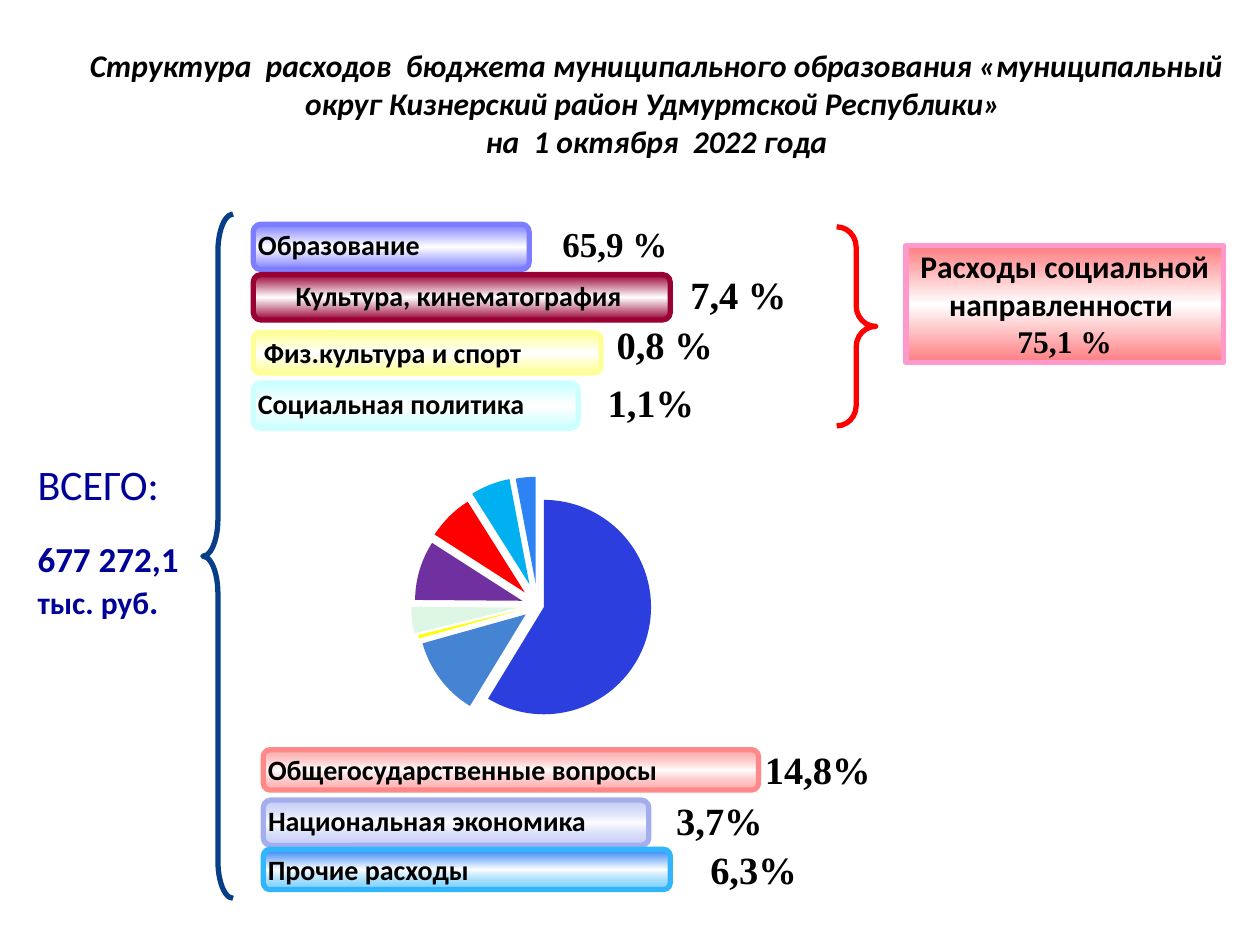
from lxml import etree
from pptx import Presentation
from pptx import util as u
from pptx.chart.data import CategoryChartData
from pptx.dml.color import RGBColor
from pptx.enum import chart as charts, shapes, text
from pptx.oxml import parse_xml
from pptx.oxml.ns import nsdecls, qn

COLORS = {
    "ink": "000000", "white": "FFFFFF", "total": "000099", "brace": "073E87",
    "red": "FF0000", "violet": "7D7DFF", "wine": "990033", "yellow": "FFFF99",
    "aqua": "CCFFFF", "coral": "FF7D7D", "coral_line": "FF8989",
    "lilac": "A4B1F4", "lilac_line": "A5AEED", "blue": "2D83F4", "sky": "31B6FD",
    "salmon": "FF7C80", "pink": "FF99CC",
}
SANS, SERIF = "Calibri", "Times New Roman"
LEFT, CENTER = text.PP_ALIGN.LEFT, text.PP_ALIGN.CENTER
TOP, MIDDLE = text.MSO_ANCHOR.TOP, text.MSO_ANCHOR.MIDDLE
RECT, ROUND = shapes.MSO_SHAPE.RECTANGLE, shapes.MSO_SHAPE.ROUNDED_RECTANGLE

TITLE = ("Структура  расходов  бюджета муниципального образования «муниципальный "
         "округ Кизнерский район Удмуртской Республики» \vна  1 октября  2022 года")

SOCIAL_LEFT, OTHER_LEFT = 2.01, 2.09
BARS = [
    (" Физ.культура и спорт", (SOCIAL_LEFT, 2.64, 2.76, 0.32), LEFT,
     ("yellow", 100), ("yellow", 100), "yellow"),
    ("Социальная политика", (SOCIAL_LEFT, 3.04, 2.58, 0.36), LEFT,
     ("aqua", 100), ("aqua", 100), "aqua"),
    ("Образование", (SOCIAL_LEFT, 1.78, 2.19, 0.36), LEFT,
     ("violet", 100), ("violet", 100), "violet"),
    ("Культура, кинематография ", (SOCIAL_LEFT, 2.18, 3.31, 0.36), CENTER,
     ("wine", 100), ("wine", 100), "wine"),
    ("Общегосударственные вопросы", (OTHER_LEFT, 5.95, 3.93, 0.32), LEFT,
     ("coral", 63), ("coral", 63), "coral_line"),
    ("Национальная экономика", (OTHER_LEFT, 6.35, 3.06, 0.36), LEFT,
     ("lilac", 63), ("lilac", 63), "lilac_line"),
    ("Прочие расходы", (OTHER_LEFT, 6.74, 3.23, 0.32), LEFT,
     ("blue", 100), ("sky", 63), "sky"),
]
SHARES = [
    ("65,9 %", (4.37, 1.62, 1.02, 0.63), 20),
    ("7,4 %", (4.92, 2.18, 1.88, 0.31), 22),
    ("0,8 %", (4.84, 2.58, 0.87, 0.31), 22),
    ("1,1%", (4.69, 3.04, 0.95, 0.31), 22),
    ("14,8%", (6.02, 5.95, 0.94, 0.31), 22),
    ("3,7%", (5.16, 6.35, 1.1, 0.31), 22),
    ("6,3%", (5.47, 6.74, 1.02, 0.31), 22),
]
BRACES = [
    ((6.64, 1.8, 0.31, 1.58), 180, 0.522, "red"),
    ((1.61, 1.7, 0.24, 5.43), 0, 1.232, "brace"),
]
SLICES = [
    (59, "2D3EDF", 6), (12, "4584D3", 14), (0.5, "FFFF00", 15), (4, "DEF6E4", 18),
    (9, "7030A0", 15), (7, "FF0000", 17), (6, "00B0F0", 21), (3, "2D83F4", 20),
]
SERIES_EXPLOSION = 31
PLOT = {"x": 0.1, "y": 0.498, "w": 0.54, "h": 0.502}


def rgb(value):
    return RGBColor.from_string(value)


def inches(place):
    return [u.Inches(value) for value in place]


def assign(target, values):
    for name, value in values.items():
        setattr(target, name, value)


def write(shape, paragraphs, align=LEFT, anchor=TOP, inset=(0.02, 0.01), wrap=True, grow=False):
    frame = shape.text_frame
    across, down = inches(inset)
    size = text.MSO_AUTO_SIZE.SHAPE_TO_FIT_TEXT if grow else text.MSO_AUTO_SIZE.NONE
    assign(frame, {"margin_left": across, "margin_right": across, "margin_top": down,
                   "margin_bottom": down, "vertical_anchor": anchor,
                   "word_wrap": wrap, "auto_size": size})
    for index, spans in enumerate(paragraphs):
        para = frame.paragraphs[0] if index == 0 else frame.add_paragraph()
        para.alignment = align
        for words, points, face, bold, color in spans:
            span = para.add_run()
            span.text = words
            assign(span.font, {"size": u.Pt(points), "name": face, "bold": bold})
            span.font.color.rgb = rgb(COLORS[color])


def add_outlined(page, kind, place, line):
    shape = page.shapes.add_shape(kind, *inches(place))
    shape.shadow.inherit = False
    shape.line.color.rgb = rgb(COLORS[line])
    shape.line.width = u.Pt(3)
    return shape


def shade(shape, first, last):
    shape.fill.gradient()
    shape.fill.gradient_angle = 270
    stops = next(shape.element.iter(qn("a:gsLst")))
    for stop in list(stops):
        stops.remove(stop)
    for position, (color, alpha) in ((0, first), (50, ("white", 100)), (100, last)):
        stop = etree.SubElement(stops, qn("a:gs"), pos=str(position * 1000))
        tone = etree.SubElement(stop, qn("a:srgbClr"), val=COLORS[color])
        if alpha < 100:
            etree.SubElement(tone, qn("a:alpha"), val=str(alpha * 1000))


def add_pie(page):
    data = CategoryChartData()
    data.categories = [str(index + 1) for index in range(len(SLICES))]
    data.add_series("Series 1", [value for value, _, _ in SLICES])
    chart = page.shapes.add_chart(charts.XL_CHART_TYPE.PIE,
                                  *inches((1.8, 1.48, 6.67, 4.44)), data).chart
    assign(chart, {"has_legend": False, "has_title": False})
    assign(chart.font, {"size": u.Pt(18), "name": SANS})
    chart.font.color.rgb = rgb(COLORS["ink"])
    plot = chart.plots[0]
    plot.vary_by_categories = True
    series = plot.series[0]
    for index, (_, color, _) in enumerate(SLICES):
        fill = series.points[index].format.fill
        fill.solid()
        fill.fore_color.rgb = rgb(color)

    def explosion(amount):
        return parse_xml(f'<c:explosion {nsdecls("c")} val="{amount}"/>')

    points = series._element.findall(qn("c:dPt"))
    for point, (_, _, amount) in zip(points, SLICES):
        point.find(qn("c:spPr")).addprevious(explosion(amount))
    points[0].addprevious(explosion(SERIES_EXPLOSION))

    area = chart.element.find(".//" + qn("c:plotArea"))
    for layout in area.findall(qn("c:layout")):
        area.remove(layout)
    settings = {"layoutTarget": "inner", "xMode": "edge", "yMode": "edge", **PLOT}
    rules = "".join(f'<c:{name} val="{value}"/>' for name, value in settings.items())
    area.insert(0, parse_xml(f'<c:layout {nsdecls("c")}><c:manualLayout>{rules}'
                             "</c:manualLayout></c:layout>"))


def main():
    deck = Presentation()
    deck.slide_width, deck.slide_height = inches((10, 7.5))
    page = deck.slides.add_slide(deck.slide_layouts[5])

    title = page.shapes.title
    assign(title, dict(zip(("left", "top", "width", "height"), inches((0.42, 0.28, 9.58, 1.07)))))
    write(title, [[(TITLE, 18, SANS, True, "ink")]], CENTER, MIDDLE, (0.1, 0.05))
    title.text_frame.paragraphs[0].runs[0].font.italic = True
    para = title.text_frame.paragraphs[0]
    lines = TITLE.split("\v")
    para.runs[0].text = lines[0]
    para.add_line_break()
    span = para.add_run()
    span.text = lines[1]
    assign(span.font, {"size": u.Pt(18), "name": SANS, "bold": True, "italic": True})
    span.font.color.rgb = rgb(COLORS["ink"])

    add_pie(page)

    for words, place, align, first, last, line in BARS:
        bar = add_outlined(page, ROUND, place, line)
        shade(bar, first, last)
        write(bar, [[(words, 16, SANS, True, "ink")]], align, grow=True)

    for words, place, points in SHARES:
        box = page.shapes.add_textbox(*inches(place))
        write(box, [[(words, points, SERIF, True, "ink")]], CENTER, MIDDLE, (0.02, 0.02))

    for place, turn, curl, color in BRACES:
        brace = add_outlined(page, shapes.MSO_SHAPE.LEFT_BRACE, place, color)
        brace.fill.background()
        brace.rotation = turn
        brace.adjustments[0] = curl
        brace.adjustments[1] = 0.5

    social = add_outlined(page, RECT, (7.19, 1.95, 2.52, 0.93), "pink")
    shade(social, ("salmon", 100), ("salmon", 100))
    write(social, [[("Расходы социальной направленности ", 18, SANS, True, "ink")],
                   [("75,1 %", 18, SERIF, True, "ink")]], CENTER, grow=True)

    amount = page.shapes.add_textbox(*inches((0.2, 4.22, 1.46, 0.77)))
    write(amount, [[("677 272,1", 20, SANS, True, "total")],
                   [("тыс. руб", 18, SANS, True, "total"), (".", 20, SANS, True, "total")]],
          inset=(0.1, 0.05), wrap=False, grow=True)
    total = page.shapes.add_textbox(*inches((0.2, 3.59, 1.5, 0.5)))
    write(total, [[("ВСЕГО:", 24, SANS, False, "total")]], inset=(0.1, 0.05), grow=True)

    deck.save("out.pptx")


if __name__ == "__main__":
    main()
